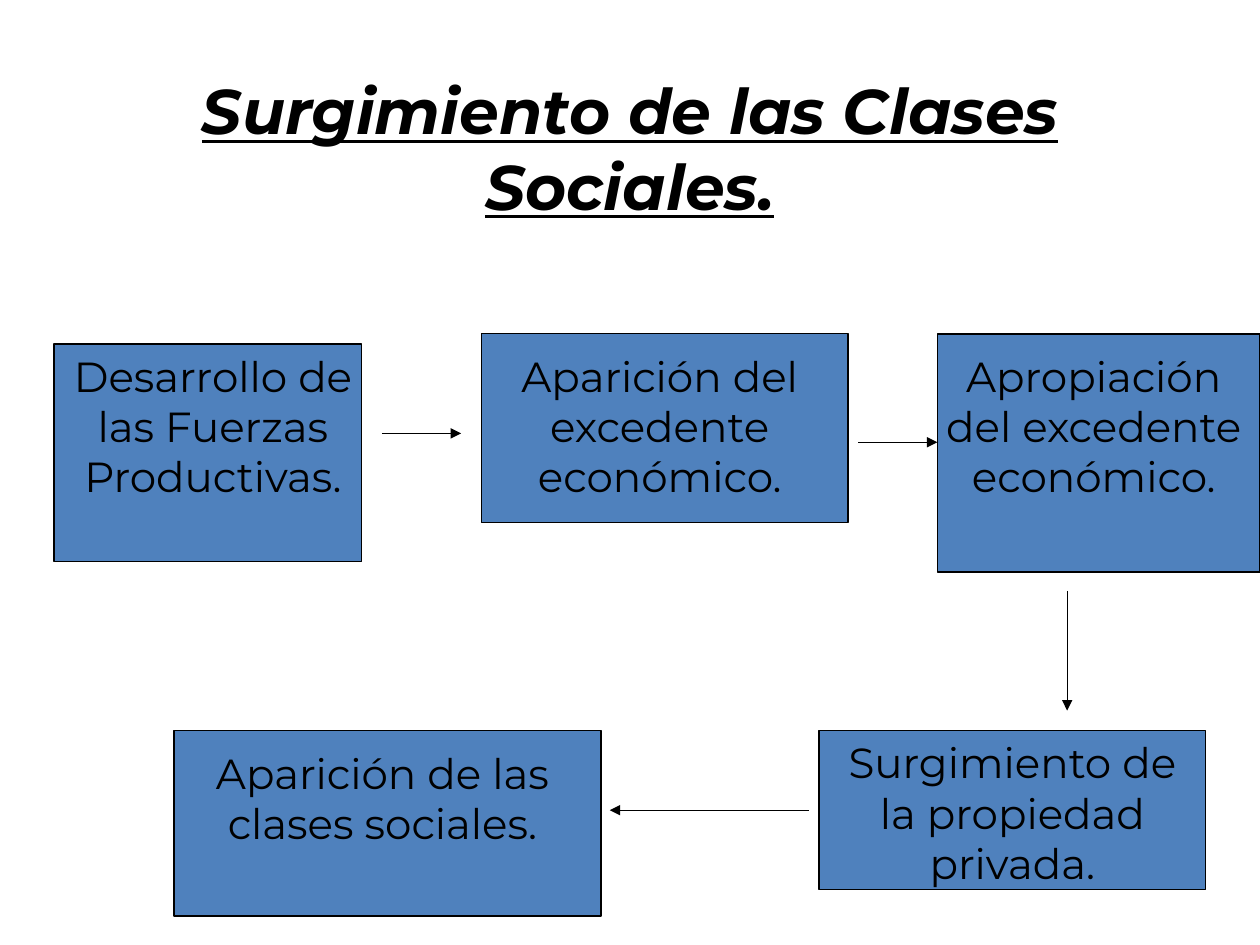
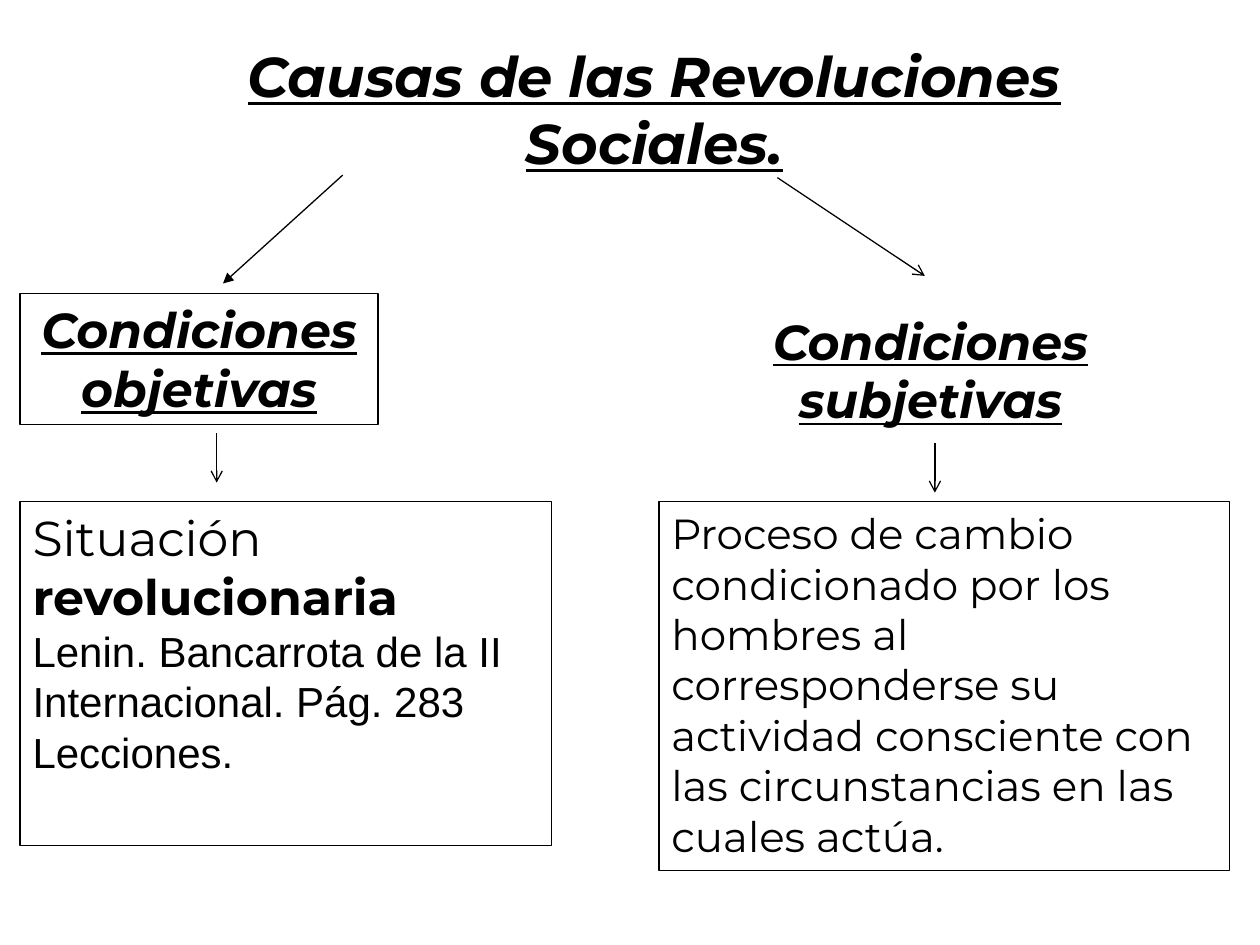
from lxml import etree
from pptx import Presentation
from pptx.dml.color import RGBColor
from pptx.enum.shapes import MSO_CONNECTOR, MSO_SHAPE
from pptx.enum.text import MSO_ANCHOR, MSO_AUTO_SIZE, PP_ALIGN
from pptx.oxml.ns import qn
from pptx.util import Inches, Pt

RECTANGLE = MSO_SHAPE.RECTANGLE
STRAIGHT = MSO_CONNECTOR.STRAIGHT
TOP = MSO_ANCHOR.TOP
NO_AUTOFIT = MSO_AUTO_SIZE.NONE
LEFT, CENTER = PP_ALIGN.LEFT, PP_ALIGN.CENTER
TITLE_ONLY = 5

COLORS = {"ink": "000000", "box": "4F81BD"}
HEADING_FONT, NOTE_FONT = "Montserrat", "Arial"
LINE_WIDTH = 0.75


def color(name):
    return RGBColor.from_string(COLORS[name])


class SlideBuilder:
    """Holds the shared style and the slide being built."""

    def __init__(self, presentation):
        self.presentation = presentation
        self.slide = None

    def start(self, title, place, size):
        layout = self.presentation.slide_layouts[TITLE_ONLY]
        self.slide = self.presentation.slides.add_slide(layout)
        shape = self.slide.shapes.title
        shape.left, shape.top, shape.width, shape.height = map(Inches, place)
        self.fill_text(shape, [title], size, CENTER, emphasis=True)

    def style_paragraph(self, paragraph, size, align=LEFT, font=HEADING_FONT, emphasis=False):
        paragraph.alignment = align
        paragraph.font.name = font
        paragraph.font.size = Pt(size)
        paragraph.font.color.rgb = color("ink")
        paragraph.font.bold = paragraph.font.italic = paragraph.font.underline = emphasis

    def fill_text(self, shape, texts, size, align=LEFT, emphasis=False):
        frame = shape.text_frame
        frame.word_wrap = True
        frame.auto_size = NO_AUTOFIT
        frame.vertical_anchor = TOP
        frame.text = "\n".join(texts)
        for paragraph in frame.paragraphs:
            self.style_paragraph(paragraph, size, align, emphasis=emphasis)

    def label(self, text, place, size=24, emphasis=False):
        shape = self.slide.shapes.add_textbox(*map(Inches, place))
        self.fill_text(shape, [text], size, CENTER, emphasis)

    def box(self, place, fill=None):
        shape = self.slide.shapes.add_shape(RECTANGLE, *map(Inches, place))
        shape.shadow.inherit = False
        if fill:
            shape.fill.solid()
            shape.fill.fore_color.rgb = color(fill)
        else:
            shape.fill.background()
        shape.line.color.rgb = color("ink")
        shape.line.width = Pt(LINE_WIDTH)
        return shape

    def arrow(self, start, end, head="triangle"):
        connector = self.slide.shapes.add_connector(STRAIGHT, *map(Inches, start + end))
        connector.line.color.rgb = color("ink")
        connector.line.width = Pt(LINE_WIDTH)
        properties = connector._element.spPr
        line = properties.find(qn("a:ln"))
        etree.SubElement(line, qn("a:tailEnd"), type=head)
        etree.SubElement(properties, qn("a:effectLst"))


def build_class_origins(builder):
    builder.start("Surgimiento de las Clases Sociales.", (0.75, 0.52, 8.5, 1.3), 36)

    # Steps: box place, label, label place
    steps = [
        ((0.43, 2.73, 2.44, 1.73), "Desarrollo de las Fuerzas Productivas.", (0.43, 2.73, 2.52, 1.7)),
        ((3.82, 2.65, 2.91, 1.5), "Aparición del excedente económico.", (3.74, 2.73, 2.99, 1.3)),
        ((7.44, 2.65, 2.56, 1.89), "Apropiación del excedente económico.", (7.36, 2.73, 2.64, 1.7)),
        ((6.5, 5.8, 3.07, 1.26), "Surgimiento de la propiedad privada.", (6.5, 5.8, 3.07, 1.3)),
        ((1.38, 5.8, 3.39, 1.47), "Aparición de las clases sociales.", (1.46, 5.88, 3.15, 0.9)),
    ]
    for box_place, text, text_place in steps:
        builder.box(box_place, "box")
        builder.label(text, text_place)

    # Arrows from each step to the next
    for start, end in [
        ((3.03, 3.44), (3.66, 3.44)),
        ((6.81, 3.51), (7.44, 3.51)),
        ((8.47, 4.69), (8.47, 5.64)),
        ((6.42, 6.43), (4.84, 6.43)),
    ]:
        builder.arrow(start, end)


def build_revolution_causes(builder):
    builder.start("Causas de las Revoluciones Sociales.", (1.14, 0.28, 8.11, 1.17), 32)

    # Objective conditions
    builder.arrow((2.72, 1.39), (1.77, 2.25))
    heading = builder.box((0.16, 2.33, 2.84, 1.04))
    builder.fill_text(heading, ["Condiciones objetivas"], 28, CENTER, emphasis=True)
    builder.arrow((1.72, 3.44), (1.72, 3.83), "arrow")
    situation = builder.box((0.16, 3.98, 4.22, 2.73))
    source = "Lenin. Bancarrota de la II Internacional. Pág. 283 Lecciones."
    builder.fill_text(situation, ["Situación ", source], 28)
    first, second = situation.text_frame.paragraphs
    strong = first.add_run()
    strong.text = "revolucionaria"
    strong.font.bold = True
    builder.style_paragraph(second, 24, font=NOTE_FONT)

    # Subjective conditions
    builder.arrow((6.17, 1.41), (7.34, 2.19), "arrow")
    builder.label("Condiciones subjetivas", (5.47, 2.42, 3.83, 1.04), 28, emphasis=True)
    builder.arrow((7.42, 3.52), (7.42, 3.91), "arrow")
    process = builder.box((5.23, 3.98, 4.53, 2.93))
    builder.fill_text(process, [
        "Proceso de cambio condicionado por los hombres al corresponderse "
        "su actividad consciente con las circunstancias en las cuales actúa."
    ], 24)


def main():
    presentation = Presentation()
    presentation.slide_width = Inches(10)
    presentation.slide_height = Inches(7.5)
    builder = SlideBuilder(presentation)
    build_class_origins(builder)
    build_revolution_causes(builder)
    presentation.save("out.pptx")


if __name__ == "__main__":
    main()
